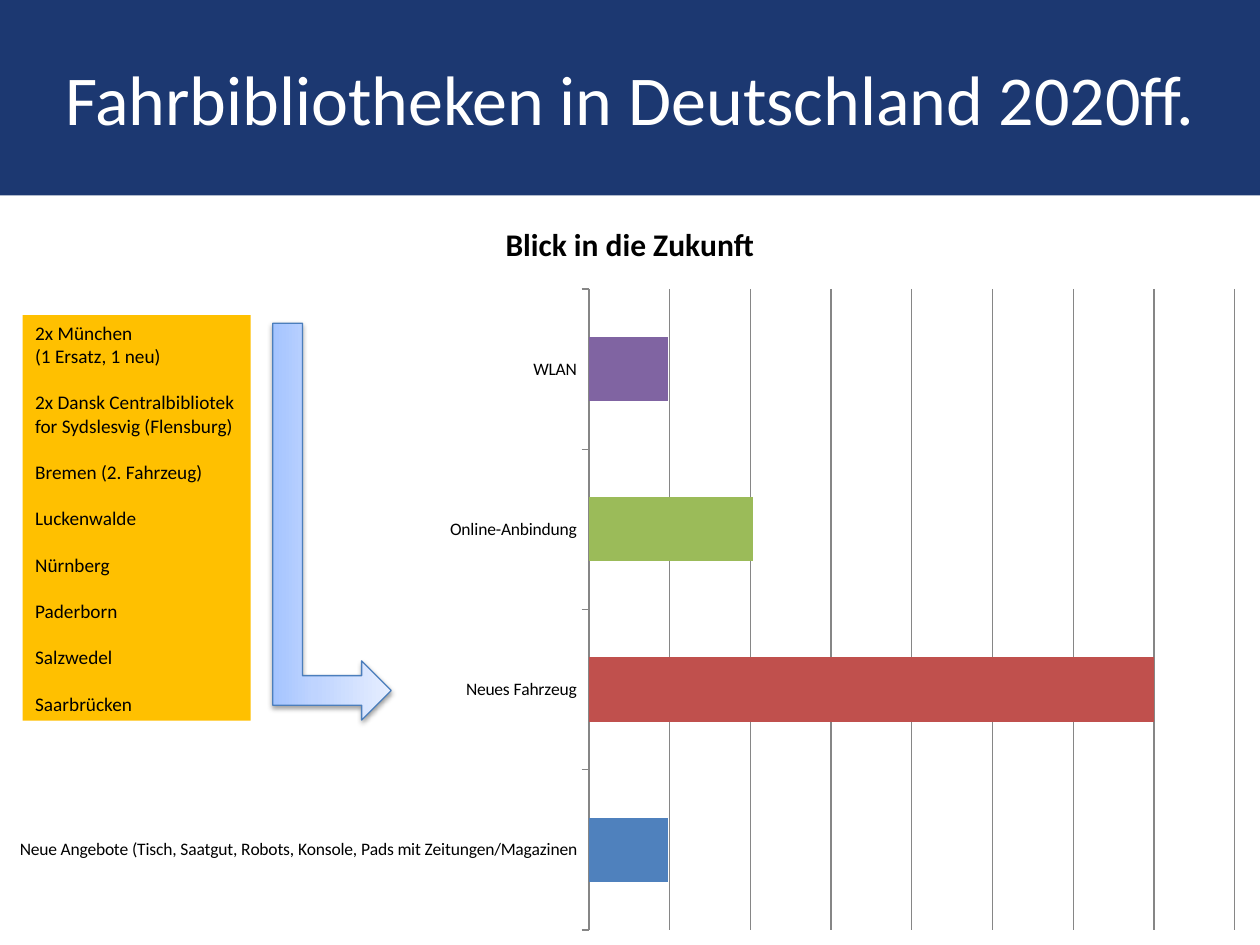
from lxml import etree
from pptx import Presentation
from pptx.chart.data import CategoryChartData
from pptx.dml.color import RGBColor
from pptx.enum import chart as charts, shapes, text
from pptx.oxml import parse_xml
from pptx.oxml.ns import qn
from pptx.util import Inches, Pt

FONT = "Calibri"
BLACK = RGBColor(0, 0, 0)
WHITE = RGBColor(255, 255, 255)
NAVY = RGBColor(0x00, 0x20, 0x60)
AMBER = RGBColor(0xFF, 0xC0, 0x00)
GREY = RGBColor(0x86, 0x86, 0x86)
ARROW_LINE = RGBColor(0x4B, 0x7E, 0xBC)
BARS = [
    ("Neue Angebote (Tisch, Saatgut, Robots, Konsole, Pads mit Zeitungen/Magazinen",
     14, RGBColor(0x4F, 0x81, 0xBD)),
    ("Neues Fahrzeug", 100, RGBColor(0xC0, 0x50, 0x4D)),
    ("Online-Anbindung", 29, RGBColor(0x9B, 0xBB, 0x59)),
    ("WLAN", 14, RGBColor(0x80, 0x64, 0xA2)),
]
GRID_STEP = 14.29
PLACES = [
    ["2x München", "(1 Ersatz, 1 neu)"],
    ["2x Dansk Centralbibliotek for Sydslesvig (Flensburg)"],
    ["Bremen (2. Fahrzeug)"],
    ["Luckenwalde"],
    ["Nürnberg"],
    ["Paderborn"],
    ["Salzwedel"],
    ["Saarbrücken"],
]
DRAWING = 'xmlns:a="http://schemas.openxmlformats.org/drawingml/2006/main"'
GRADIENT = f"""<a:gradFill {DRAWING} rotWithShape="1"><a:gsLst>
<a:gs pos="0"><a:srgbClr val="A4C4FF"/></a:gs>
<a:gs pos="35000"><a:srgbClr val="BFD4FF"/></a:gs>
<a:gs pos="100000"><a:srgbClr val="E6EEFF"/></a:gs>
</a:gsLst><a:lin ang="16200000" scaled="1"/></a:gradFill>"""
SHADOW = f"""<a:effectLst {DRAWING}>
<a:outerShdw blurRad="39370" dist="20320" dir="5400000" rotWithShape="0">
<a:srgbClr val="000000"><a:alpha val="38000"/></a:srgbClr></a:outerShdw></a:effectLst>"""
PLOT_LAYOUT = {"xMode": "edge", "yMode": "edge", "x": 0.4675, "y": 0.125, "w": 0.5125, "h": 0.855}


def set_font(font, size, color, bold=False):
    """Give a font the slide's typeface with a size and colour."""
    font.name, font.size, font.bold = FONT, Pt(size), bold
    font.color.rgb = color


def add_panel(page, left, top, width, height, color):
    """Add a plain filled rectangle without outline."""
    panel = page.shapes.add_shape(
        shapes.MSO_SHAPE.RECTANGLE, Inches(left), Inches(top), Inches(width), Inches(height))
    panel.shadow.inherit = False
    panel.fill.solid()
    panel.fill.fore_color.rgb = color
    panel.line.fill.background()
    panel.text_frame.word_wrap = True
    return panel


def add_title(page):
    """Add the translucent title band."""
    band = add_panel(page, 0, 0, 10, 1.55, NAVY)
    color = band.fill._xPr.find(".//" + qn("a:srgbClr"))
    etree.SubElement(color, qn("a:alpha"), val="89000")
    band.text_frame.vertical_anchor = text.MSO_ANCHOR.MIDDLE
    para = band.text_frame.paragraphs[0]
    para.text = "Fahrbibliotheken in Deutschland 2020ff."
    para.alignment = text.PP_ALIGN.CENTER
    set_font(para.font, 40, WHITE)


def add_places(page):
    """Add the panel listing places, one group after another."""
    frame = add_panel(page, 0.18, 2.5, 1.81, 3.22, AMBER).text_frame
    frame.vertical_anchor = text.MSO_ANCHOR.TOP
    para = frame.paragraphs[0]
    for group_index, group in enumerate(PLACES):
        for line_index, line in enumerate(group):
            if group_index or line_index:
                para = frame.add_paragraph()
            para.text = line
            para.alignment = text.PP_ALIGN.LEFT
            if group_index and not line_index:
                para.space_before = Pt(13.3)
            set_font(para.font, 11, BLACK)


def add_arrow(page):
    """Add the bent arrow from the places to the vehicle bar."""
    arrow = page.shapes.add_shape(
        shapes.MSO_SHAPE.BENT_UP_ARROW, Inches(1.06), Inches(3.67), Inches(3.15), Inches(0.94))
    arrow.rotation = 90
    arrow.line.color.rgb = ARROW_LINE
    arrow.line.width = Pt(0.75)
    properties = arrow._element.spPr
    properties.find(qn("a:prstGeom")).addnext(parse_xml(GRADIENT))
    properties.append(parse_xml(SHADOW))


def place_plot(chart):
    """Fix the inner plot area within the chart."""
    plot_area = chart._chartSpace.chart.plotArea
    for old in plot_area.findall(qn("c:layout")):
        plot_area.remove(old)
    layout = etree.Element(qn("c:layout"))
    manual = etree.SubElement(layout, qn("c:manualLayout"))
    etree.SubElement(manual, qn("c:layoutTarget"), val="inner")
    for name, value in PLOT_LAYOUT.items():
        etree.SubElement(manual, qn("c:" + name), val=str(value))
    plot_area.insert(0, layout)


def add_bars(page):
    """Add the bar chart of future plans."""
    data = CategoryChartData()
    data.categories = [name for name, value, color in BARS]
    data.add_series("Series 1", [value for name, value, color in BARS])
    chart = page.shapes.add_chart(
        charts.XL_CHART_TYPE.BAR_CLUSTERED, Inches(0), Inches(1.55), Inches(10), Inches(5.95),
        data).chart
    set_font(chart.font, 10, BLACK)
    chart.has_legend = False
    heading = chart.chart_title.text_frame.paragraphs[0]
    heading.text = "Blick in die Zukunft"
    set_font(heading.font, 18, BLACK, bold=True)
    plot = chart.plots[0]
    plot.gap_width = 150
    plot.vary_by_categories = False
    for index, (name, value, color) in enumerate(BARS):
        fill = plot.series[0].points[index].format.fill
        fill.solid()
        fill.fore_color.rgb = color
    chart.category_axis.major_tick_mark = charts.XL_TICK_MARK.OUTSIDE
    chart.category_axis.format.line.color.rgb = GREY
    scale = chart.value_axis
    scale.visible = False
    scale.minimum_scale, scale.maximum_scale = 0, 8 * GRID_STEP
    scale.major_unit = GRID_STEP
    scale.has_major_gridlines = True
    scale.major_gridlines.format.line.color.rgb = GREY
    place_plot(chart)


def main():
    """Build and save the slide."""
    deck = Presentation()
    deck.slide_width, deck.slide_height = Inches(10), Inches(7.5)
    page = deck.slides.add_slide(deck.slide_layouts[6])
    add_bars(page)
    add_title(page)
    add_places(page)
    add_arrow(page)
    deck.save("out.pptx")


if __name__ == "__main__":
    main()
